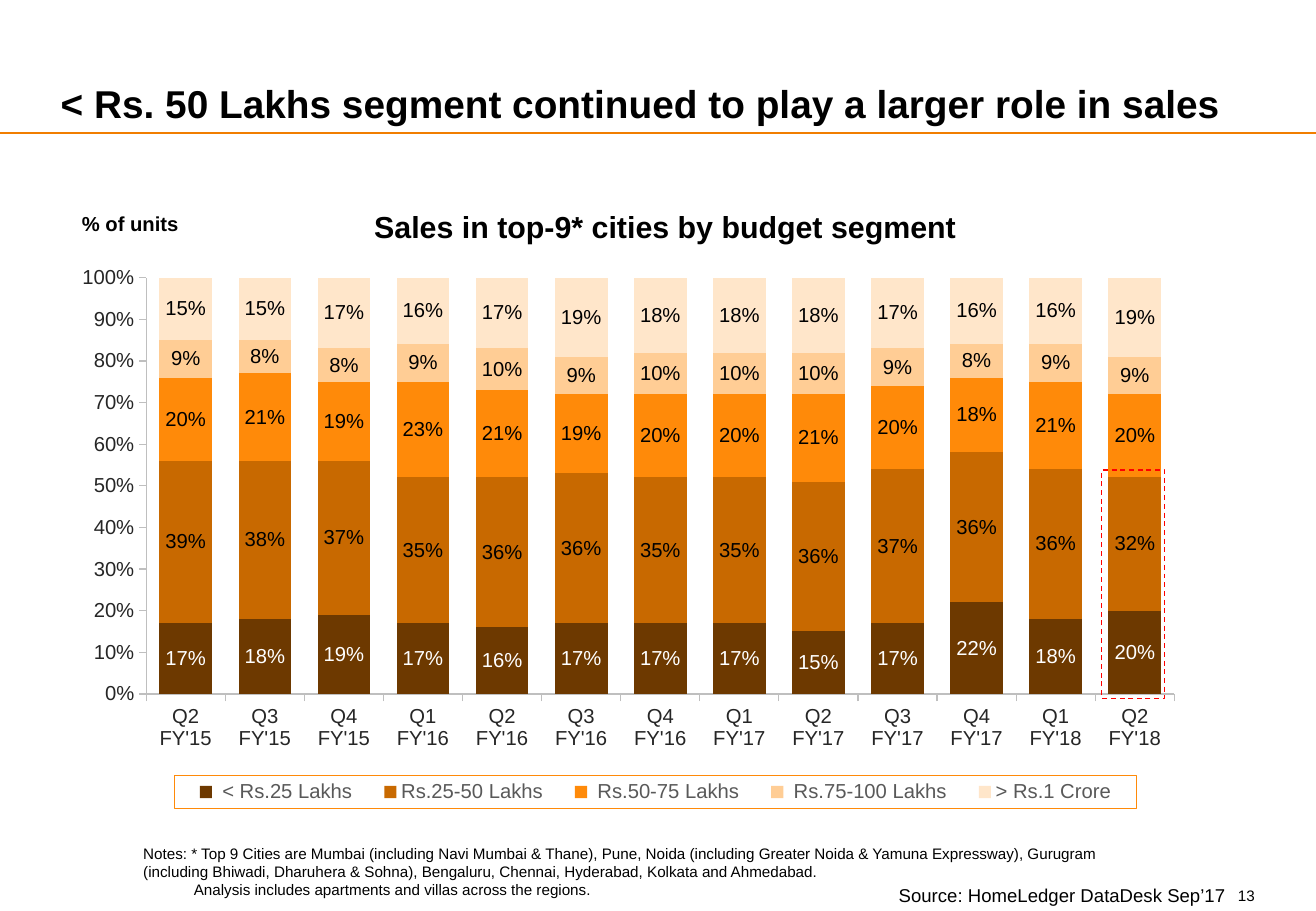
from lxml import etree
from pptx import Presentation
from pptx import util as u
from pptx.chart.data import CategoryChartData
from pptx.dml.color import RGBColor
from pptx.enum import chart as ch, dml, shapes, text
from pptx.oxml import ns

Pt = u.Pt
FONT = "Arial"
COLORS = {
    "black": "000000", "white": "FFFFFF", "rule": "F17E00", "focus": "FF0000",
    "axis_text": "262626", "axis_line": "BFBFBF", "legend_text": "595959",
}


def add_label(box, lines, size, bold=False, align=text.PP_ALIGN.LEFT, wrap=True):
    label = slide.shapes.add_textbox(*[Pt(v) for v in box])
    frame = label.text_frame
    frame.word_wrap = wrap
    frame.text = "\n".join(lines)
    for paragraph in frame.paragraphs:
        paragraph.alignment = align
        paragraph.font.name, paragraph.font.size = FONT, Pt(size)
        paragraph.font.bold = bold
        paragraph.font.color.rgb = RGBColor.from_string(COLORS["black"])
    return frame


def set_layout(parent, index, **settings):
    for old in parent.findall(ns.qn("c:layout")):
        parent.remove(old)
    layout = etree.Element(ns.qn("c:layout"))
    manual = etree.SubElement(layout, ns.qn("c:manualLayout"))
    for tag, value in settings.items():
        etree.SubElement(manual, ns.qn("c:" + tag)).set("val", str(value))
    parent.insert(index, layout)


prs = Presentation()
prs.slide_width, prs.slide_height = Pt(780), Pt(540)
slide = prs.slides.add_slide(prs.slide_layouts[6])

# Rule under the headline
rule = slide.shapes.add_connector(shapes.MSO_CONNECTOR.STRAIGHT, Pt(0), Pt(79), Pt(780), Pt(79))
rule.line.color.rgb = RGBColor.from_string(COLORS["rule"])
rule.line.width = Pt(1.5)
etree.SubElement(rule._element.spPr, ns.qn("a:effectLst"))

# Page number and source
page = add_label((728.6, 525.6, 15.2, 10.8), ["13"], 9, align=text.PP_ALIGN.RIGHT, wrap=False)
page.margin_left = page.margin_right = page.margin_top = page.margin_bottom = 0
add_label((525.6, 520.6, 247, 20.9), ["Source: HomeLedger DataDesk Sep’17"], 11)

# Share of units by budget segment, in percent
segments = [
    (" < Rs.25 Lakhs", "6D3900", "white", [17, 18, 19, 17, 16, 17, 17, 17, 15, 17, 22, 18, 20]),
    ("Rs.25-50 Lakhs", "C86900", "black", [39, 38, 37, 35, 36, 36, 35, 35, 36, 37, 36, 36, 32]),
    (" Rs.50-75 Lakhs", "FF8A09", "black", [20, 21, 19, 23, 21, 19, 20, 20, 21, 20, 18, 21, 20]),
    (" Rs.75-100 Lakhs", "FFCD95", "black", [9, 8, 8, 9, 10, 9, 10, 10, 10, 9, 8, 9, 9]),
    ("> Rs.1 Crore", "FFE6CA", "black", [15, 15, 17, 16, 17, 19, 18, 18, 18, 17, 16, 16, 19]),
]
sales = CategoryChartData(number_format="0%")
# Quarters run from Q2 FY'15 to Q2 FY'18
sales.categories = [f"Q{n % 4 + 1}\nFY'{15 + n // 4}" for n in range(1, 14)]
for name, _, _, shares in segments:
    sales.add_series(name, [share / 100 for share in shares])
chart = slide.shapes.add_chart(ch.XL_CHART_TYPE.COLUMN_STACKED, Pt(43.2), Pt(103),
                               Pt(701.3), Pt(416.2), sales).chart
chart.font.name, chart.font.size = FONT, Pt(10)
chart.font.color.rgb = RGBColor.from_string(COLORS["black"])

# Chart title
chart.has_title = True
chart.chart_title.text_frame.text = "Sales in top-9* cities by budget segment"
title_font = chart.chart_title.text_frame.paragraphs[0].runs[0].font
title_font.name, title_font.size, title_font.bold = FONT, Pt(18), True
title_font.color.rgb = RGBColor.from_string(COLORS["black"])
set_layout(chart.chart_title._element, 1, xMode="edge", yMode="edge", x=0.25, y=0.04)

# Columns
plot = chart.plots[0]
plot.gap_width, plot.overlap, plot.vary_by_categories = 50, 100, False
for series, (_, fill, label_color, _) in zip(plot.series, segments):
    series.format.fill.solid()
    series.format.fill.fore_color.rgb = RGBColor.from_string(fill)
    labels = series.data_labels
    labels.show_value = True
    labels.number_format, labels.number_format_is_linked = "0%", False
    labels.position = ch.XL_LABEL_POSITION.CENTER
    labels.font.name, labels.font.size = FONT, Pt(12)
    labels.font.color.rgb = RGBColor.from_string(COLORS[label_color])
set_layout(chart._chartSpace.chart.plotArea, 0, layoutTarget="inner", xMode="edge",
           yMode="edge", x=0.062, y=0.148, w=0.869, h=0.593)

# Axes
for axis in (chart.category_axis, chart.value_axis):
    axis.has_major_gridlines = False
    axis.major_tick_mark = ch.XL_TICK_MARK.OUTSIDE
    axis.minor_tick_mark = ch.XL_TICK_MARK.NONE
    axis.tick_labels.font.name, axis.tick_labels.font.size = FONT, Pt(12)
    axis.tick_labels.font.color.rgb = RGBColor.from_string(COLORS["axis_text"])
    axis.format.line.color.rgb = RGBColor.from_string(COLORS["axis_line"])
    axis.format.line.width = Pt(0.75)
shares_axis = chart.value_axis
shares_axis.minimum_scale, shares_axis.maximum_scale, shares_axis.major_unit = 0, 1, 0.1
shares_axis.tick_labels.number_format = "0%"
shares_axis.tick_labels.number_format_is_linked = False

# Legend with an orange frame
chart.has_legend = True
legend = chart.legend
legend.position = ch.XL_LEGEND_POSITION.BOTTOM
legend.include_in_layout = False
legend.font.name, legend.font.size = FONT, Pt(12)
legend.font.color.rgb = RGBColor.from_string(COLORS["legend_text"])
set_layout(legend._element, 1, xMode="edge", yMode="edge", x=0.086, y=0.857, w=0.813, h=0.047)
frame_props = etree.Element(ns.qn("c:spPr"))
frame_line = etree.SubElement(frame_props, ns.qn("a:ln"), w=str(Pt(0.75)))
frame_fill = etree.SubElement(frame_line, ns.qn("a:solidFill"))
etree.SubElement(frame_fill, ns.qn("a:srgbClr"), val="FF8A09")
legend._element.find(ns.qn("c:txPr")).addprevious(frame_props)

# Headline and unit
headline = add_label((36, 13, 707.8, 65.5),
                     ["< Rs. 50 Lakhs segment continued to play a larger role in sales"], 23, bold=True)
headline.vertical_anchor = text.MSO_ANCHOR.BOTTOM
headline.margin_left = headline.margin_right = 0
add_label((14.4, 121.7, 128.9, 21.6), ["% of units "], 12, bold=True, align=text.PP_ALIGN.CENTER)

# Notes
notes = add_label((77.8, 496.8, 608.4, 40.3), [
    "Notes: * Top 9 Cities are Mumbai (including Navi Mumbai & Thane), Pune, Noida (including "
    "Greater Noida & Yamuna Expressway), Gurugram (including Bhiwadi, Dharuhera & Sohna), "
    "Bengaluru, Chennai, Hyderabad, Kolkata and Ahmedabad.",
    "Analysis includes apartments and villas across the regions."], 9)
notes.paragraphs[1]._p.get_or_add_pPr().set("marL", str(Pt(30)))

# Dashed frame around the latest quarter below Rs. 50 Lakhs
focus = slide.shapes.add_shape(shapes.MSO_SHAPE.RECTANGLE, Pt(653), Pt(278.6), Pt(37.4), Pt(135.4))
focus.shadow.inherit = False
focus.fill.background()
focus.line.color.rgb = RGBColor.from_string(COLORS["focus"])
focus.line.width = Pt(0.75)
focus.line.dash_style = dml.MSO_LINE.DASH

prs.save("out.pptx")
